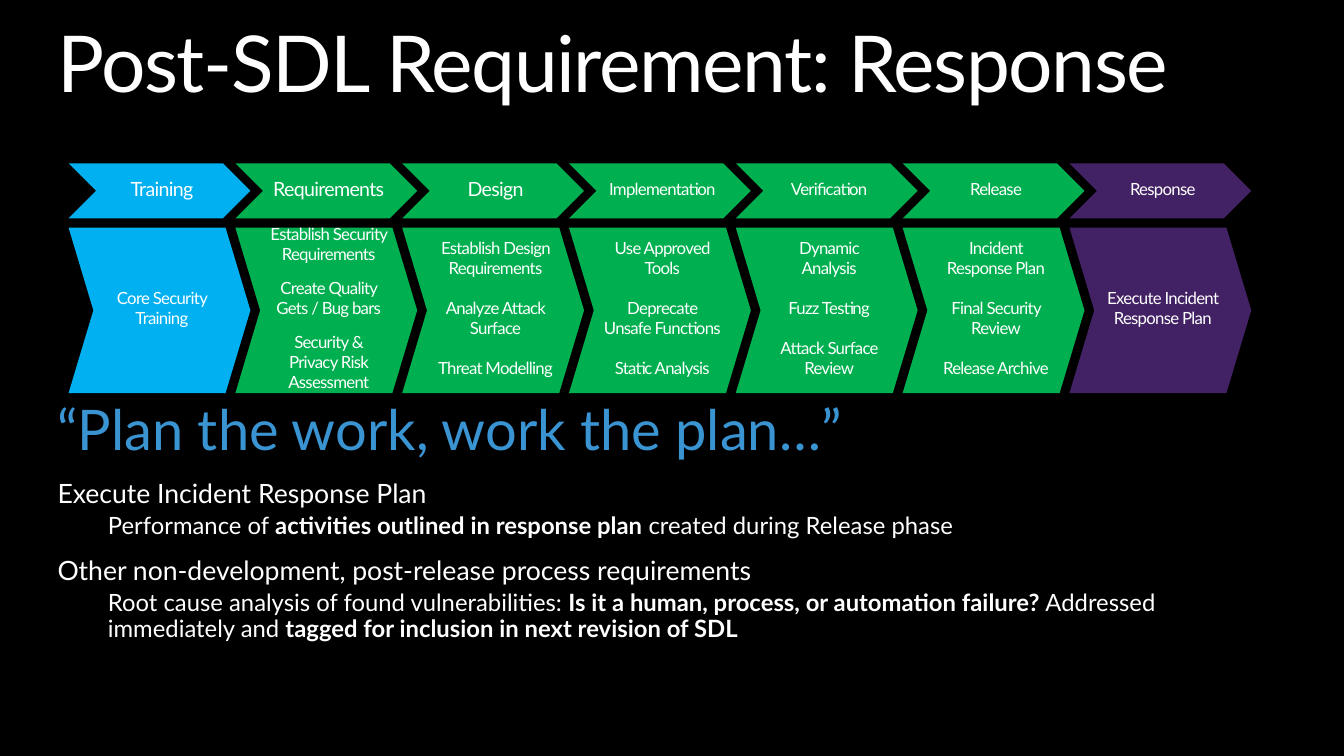
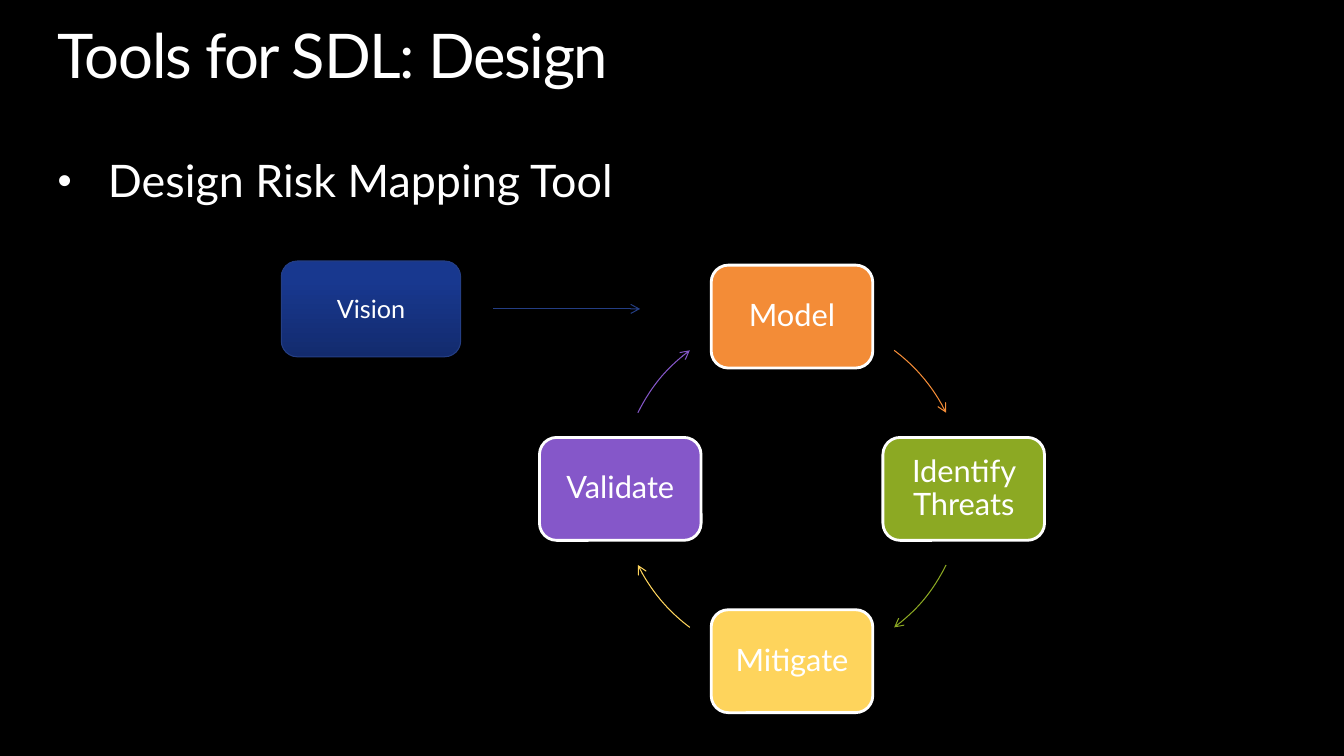
import copy

import pptx
import pptx.dml.color
import pptx.enum.shapes
import pptx.enum.text
import pptx.oxml.ns
import pptx.util

W, H = pptx.util.Inches(13.33), pptx.util.Inches(7.5)
FONT = "Lato"
COLORS = {
    "back": "000000", "text": "FFFFFF", "quote": "3A94D2",
    "training": "00B0F0", "phase": "00B050", "response": "422264",
    "model": "F38C37", "identify": "8CA923", "mitigate": "FED45C", "validate": "8557C9",
    "vision_low": "132B6E", "vision_mid": "18388F", "vision_top": "163791",
    "vision_line": "243E84",
}
SHAPE = pptx.enum.shapes.MSO_SHAPE
CENTER = pptx.enum.text.PP_ALIGN.CENTER
MIDDLE = pptx.enum.text.MSO_ANCHOR.MIDDLE
qn = pptx.oxml.ns.qn

PHASES = [
    ("Training", 14, "training", 0, ["Core Security Training"]),
    ("Requirements", 14, "phase", 9.6, ["Establish Security Requirements",
     "Create Quality Gets / Bug bars", "Security & Privacy Risk Assessment"]),
    ("Design", 14, "phase", 14.4, ["Establish Design Requirements",
     "Analyze Attack Surface", "Threat Modelling"]),
    ("Implementation", 12, "phase", 14.4, ["Use Approved Tools",
     "Deprecate Unsafe Functions", "Static Analysis"]),
    ("Verification", 12, "phase", 14.4, ["Dynamic Analysis",
     "Fuzz Testing", "Attack Surface Review"]),
    ("Release", 12, "phase", 14.4, ["Incident Response Plan",
     "Final Security Review", "Release Archive"]),
    ("Response", 12, "response", 0, ["Execute Incident Response Plan"]),
]
NOTES = [
    (40, 0, 0, "quote", [("“Plan the work, work the plan…”", False)]),
    (19, 13, 0, "text", [("Execute Incident Response Plan", False)]),
    (17, 3.4, 0.5, "text", [
        ("Performance of", False), (" activities outlined in response plan ", True),
        ("created during Release phase", False)]),
    (19, 12.5, 0, "text", [("Other non-development, post-release process requirements", False)]),
    (17, 3.4, 0.5, "text", [
        ("Root cause analysis of found vulnerabilities: ", False),
        ("Is it a human, process, or automation failure?", True),
        (" Addressed immediately and ", False),
        ("tagged for inclusion in next revision of SDL", True)]),
]
CYCLE = [
    ("Model", "model", 0, -1, 306.4),
    ("Identify Threats", "identify", 1, 0, 26.3),
    ("Mitigate", "mitigate", 0, 1, 126.4),
    ("Validate", "validate", -1, 0, 206.3),
]
ARC_SWEEP = 27.3


def rgb(name):
    """Return a palette colour."""
    return pptx.dml.color.RGBColor.from_string(COLORS[name])


def area(x, y, w, h):
    """Turn percentages of the slide into a box."""
    return W * x / 100, H * y / 100, W * w / 100, H * h / 100


def add_run(p, text, size, color="text", bold=False, spacing=0):
    """Add one styled run."""
    r = p.add_run()
    r.text = text
    r.font.name, r.font.size, r.font.bold = FONT, pptx.util.Pt(size), bold
    r.font.color.rgb = rgb(color)
    if spacing:
        r.font._element.set("spc", str(int(spacing * 100)))


def set_frame(tf, insets=(0, 0, 0, 0)):
    """Make a frame wrap, with insets in inches."""
    tf.word_wrap = True
    tf.margin_left, tf.margin_top, tf.margin_right, tf.margin_bottom = map(pptx.util.Inches, insets)


def add_text_frame(s, box):
    """Add a text box and return its frame."""
    tf = s.shapes.add_textbox(*map(int, box)).text_frame
    set_frame(tf)
    return tf


def add_shape(s, kind, box, fill=None, line=None, width=0.75):
    """Add a preset shape without shadow."""
    sp = s.shapes.add_shape(kind, *map(int, box))
    sp.shadow.inherit = False
    if fill:
        sp.fill.solid()
        sp.fill.fore_color.rgb = rgb(fill)
    else:
        sp.fill.background()
    if line:
        sp.line.color.rgb = rgb(line)
        sp.line.width = pptx.util.Pt(width)
    else:
        sp.line.fill.background()
    return sp


def write_centered(sp, texts, size, insets, gap=0, spacing=0, leading=1.0):
    """Write centred paragraphs in the middle of a shape."""
    tf = sp.text_frame
    set_frame(tf, insets)
    tf.vertical_anchor = MIDDLE
    for i, text in enumerate(texts):
        p = tf.add_paragraph() if i else tf.paragraphs[0]
        p.alignment, p.line_spacing = CENTER, leading
        p.space_before = pptx.util.Pt(gap if i else 0)
        add_run(p, text, size, spacing=spacing)


def add_arrowhead(sp):
    """Put an open arrowhead at the end of a line."""
    ln = sp._element.spPr.find(qn("a:ln"))
    ln.append(ln.makeelement(qn("a:tailEnd"), {"type": "arrow"}))


def add_slide(prs, title, size):
    """Add a blank slide with its title."""
    s = prs.slides.add_slide(prs.slide_layouts[6])
    p = add_text_frame(s, area(4.28, 3.33, 91.45, 11.33)).paragraphs[0]
    p.line_spacing = 0.9
    add_run(p, title, size, spacing=-1)
    return s


def draw_process(s, box):
    """Draw the phase chevrons above their task chevrons."""
    x, y, w, h = box
    step = w / 7.09
    chevron = step * 1.09
    insets = (0.1, 0.05, 0.05, 0.1)
    for i, (name, size, color, gap, tasks) in enumerate(PHASES):
        left = x + i * step
        sp = add_shape(s, SHAPE.CHEVRON, (left, y, chevron, h * 0.24), color)
        write_centered(sp, [name], size, insets, spacing=-0.5)
        sp = add_shape(s, SHAPE.CHEVRON, (left, y + h * 0.28, chevron, h * 0.72), color)
        sp.adjustments[0] = 0.15
        write_centered(sp, tasks, 12, insets, gap, -0.5)


def write_notes(s, box):
    """Write the quote and the indented notes."""
    tf = add_text_frame(s, box)
    for i, (size, before, indent, color, runs) in enumerate(NOTES):
        p = tf.add_paragraph() if i else tf.paragraphs[0]
        p.line_spacing, p.space_before = 0.9, pptx.util.Pt(before)
        if indent:
            p._p.get_or_add_pPr().set("marL", str(pptx.util.Inches(indent)))
        for text, bold in runs:
            add_run(p, text, size, color, bold)


def write_bullet(s, box, text):
    """Write one large bulleted line."""
    p = add_text_frame(s, box).paragraphs[0]
    p.line_spacing = 0.9
    pPr = p._p.get_or_add_pPr()
    indent = pptx.util.Inches(0.5)
    pPr.set("marL", str(indent))
    pPr.set("indent", str(-indent))
    for tag, key, value in (("a:buSzPct", "val", "90000"), ("a:buFont", "typeface", "Arial"),
                            ("a:buChar", "char", "•")):
        pPr.append(pPr.makeelement(qn(tag), {key: value}))
    add_run(p, text, 32)


def draw_cycle(s, box):
    """Draw four nodes around a ring, joined by arc arrows."""
    x, y, w, h = box
    node_w, node_h = w * 0.32, h * 0.23
    rx, ry = (w - node_w) / 2, (h - node_h) / 2
    cx, cy = x + w / 2, y + h / 2
    for name, color, dx, dy, start in CYCLE:
        node = (cx + dx * rx - node_w / 2, cy + dy * ry - node_h / 2, node_w, node_h)
        sp = add_shape(s, SHAPE.ROUNDED_RECTANGLE, node, color, "text", 2)
        write_centered(sp, [name], 22, (0.09,) * 4, leading=0.9)
        arc = add_shape(s, SHAPE.ARC, (cx - rx, cy - ry, 2 * rx, 2 * ry), line=color)
        arc.adjustments[0] = start * 0.6
        arc.adjustments[1] = (start + ARC_SWEEP) * 0.6
        add_arrowhead(arc)


def draw_vision(s, box):
    """Draw the vision node and the arrow leading out of it."""
    x, y, w, h = box
    node_w = w / 2
    sp = add_shape(s, SHAPE.ROUNDED_RECTANGLE, (x, y, node_w, h), line="vision_line")
    sp.fill.gradient()
    sp.fill.gradient_angle = 90
    stops = sp._element.spPr.find(qn("a:gradFill")).find(qn("a:gsLst"))
    stops.insert(1, copy.deepcopy(stops[0]))
    shades = ((0, "vision_low"), (0.8, "vision_mid"), (1, "vision_top"))
    for stop, (position, color) in zip(sp.fill.gradient_stops, shades):
        stop.position = position
        stop.color.rgb = rgb(color)
    write_centered(sp, ["Vision"], 18, (0.12, 0.06, 0.12, 0.06))
    ends = (x + w * 0.59, y + h / 2, x + w, y + h / 2)
    line = s.shapes.add_connector(pptx.enum.shapes.MSO_CONNECTOR.STRAIGHT, *map(int, ends))
    line.line.color.rgb = rgb("vision_line")
    line.line.width = pptx.util.Pt(0.75)
    add_arrowhead(line)
    spPr = line._element.spPr
    spPr.append(spPr.makeelement(qn("a:effectLst"), {}))


def main():
    """Build and save both slides."""
    prs = pptx.Presentation()
    prs.slide_width, prs.slide_height = W, H
    fill = prs.slide_master.background.fill
    fill.solid()
    fill.fore_color.rgb = rgb("back")

    s = add_slide(prs, "Post-SDL Requirement: Response", 56)
    write_notes(s, area(4.28, 53.2, 91.45, 32.67))
    draw_process(s, area(5.1, 21.6, 88, 30.4))

    s = add_slide(prs, "Tools for SDL: Design", 44)
    write_bullet(s, area(4.28, 21.07, 91.45, 6.4), "Design Risk Mapping Tool")
    draw_cycle(s, area(40.14, 35.07, 37.58, 59.2))
    draw_vision(s, area(20.93, 34.53, 26.7, 12.67))

    prs.save("out.pptx")


if __name__ == "__main__":
    main()
